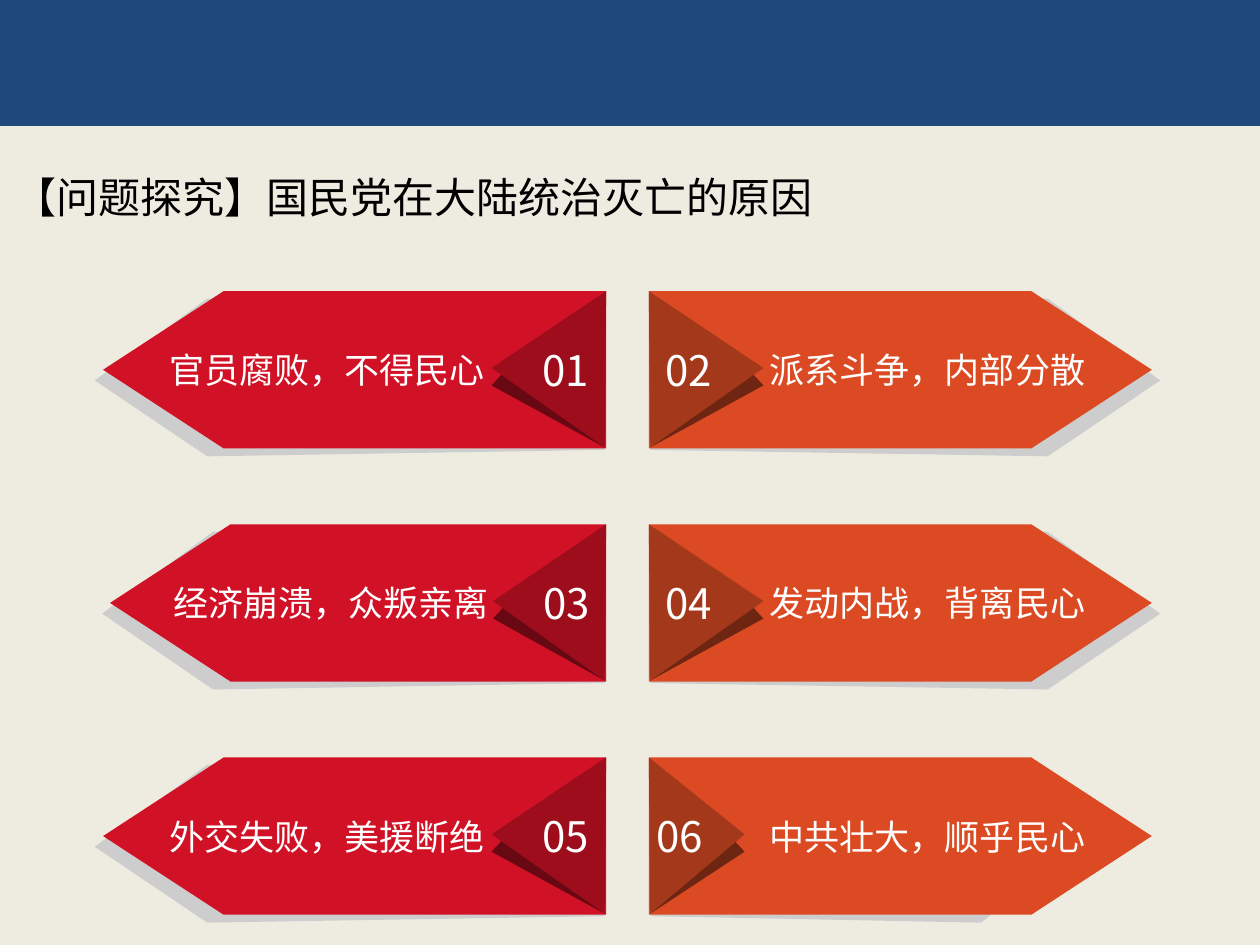
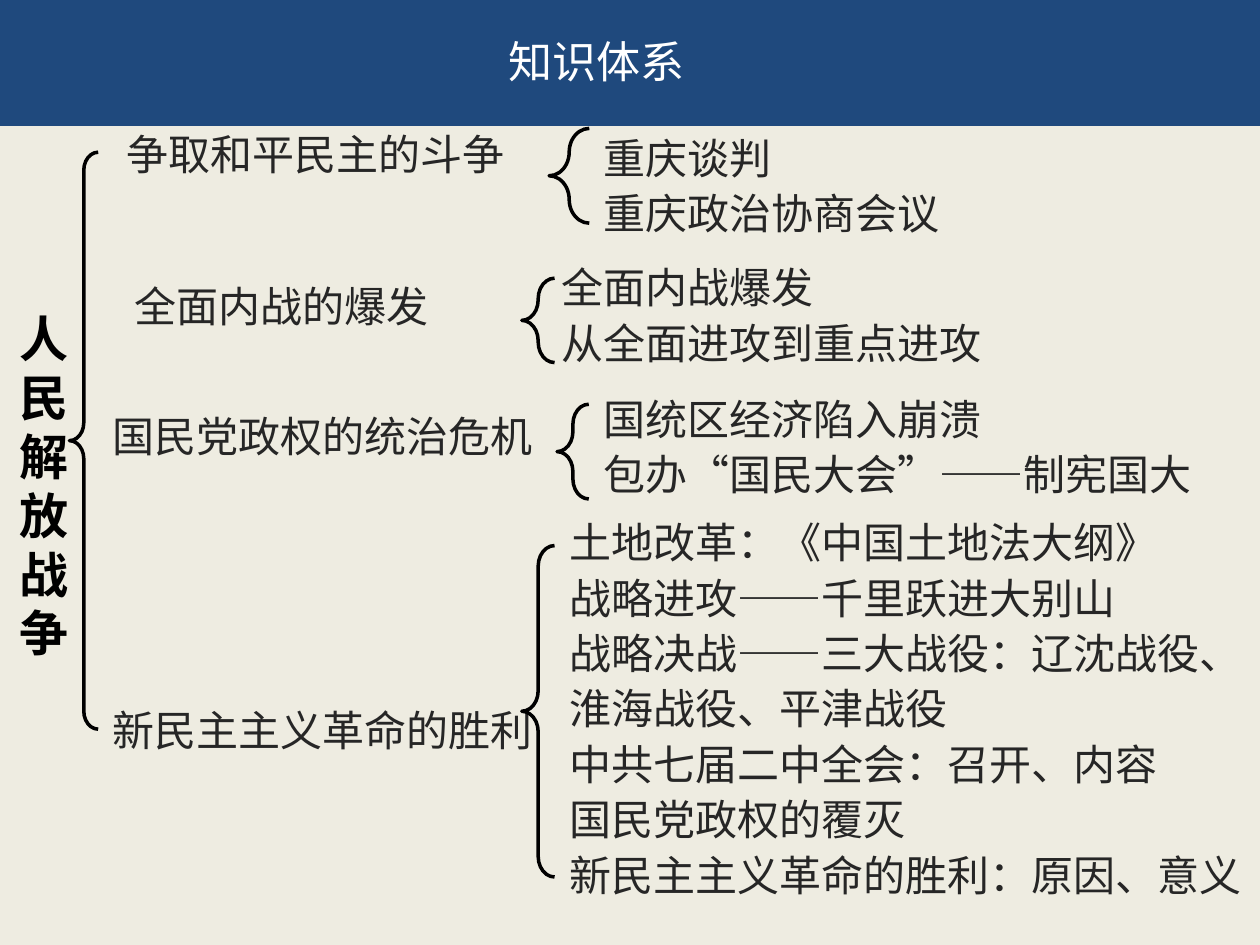
from lxml.etree import SubElement
from pptx import Presentation
from pptx.dml.color import RGBColor
from pptx.enum.lang import MSO_LANGUAGE_ID as Lang
from pptx.enum.shapes import MSO_SHAPE as Kind
from pptx.enum.text import MSO_ANCHOR as Anchor, MSO_AUTO_SIZE as Auto, PP_ALIGN as Align
from pptx.oxml.ns import qn
from pptx.util import Cm, Pt

WIDE, HIGH = 25.4, 19.05
NOTO = "Noto Sans CJK SC"
PAPER, NAVY, GREY = "EEECE1", "1F497D", "CDCDCD"
BLACK, WHITE, INK = "000000", "FFFFFF", "262626"
# Plate, fold and fold shade of the arrows on each side
RED = ("D11125", "9D0D1C", "680812")
ORANGE = ("DB4A23", "A4381A", "6E2512")


def tint(code):
    return RGBColor.from_string(code)


class Deck:
    def __init__(self):
        self.file = Presentation()
        self.file.slide_width, self.file.slide_height = Cm(WIDE), Cm(HIGH)

    def page(self):
        """Start a slide with its background and top band."""
        self.slide = self.file.slides.add_slide(self.file.slide_layouts[6])
        self.home = self.slide.shapes
        back = self.slide.background.fill
        back.solid()
        back.fore_color.rgb = tint(PAPER)
        self.shape(Kind.RECTANGLE, (0, 0, WIDE, 2.54), NAVY)

    def group(self):
        """Send the next shapes into a new group."""
        self.home = self.slide.shapes.add_group_shape().shapes

    def paint(self, item, fill):
        item.shadow.inherit = False
        item.line.fill.background()
        if fill:
            item.fill.solid()
            item.fill.fore_color.rgb = tint(fill)
        else:
            item.fill.background()
        return item

    def shape(self, kind, box, fill=None):
        return self.paint(self.home.add_shape(kind, *map(Cm, box)), fill)

    def form(self, dots, fill):
        """Draw a closed outline through the given points."""
        dots = [(Cm(x), Cm(y)) for x, y in dots]
        pen = self.home.build_freeform(*dots[0])
        pen.add_line_segments(dots[1:], close=True)
        return self.paint(pen.convert_to_shape(), fill)

    def put(self, frame, lines, size, hue, face=NOTO, bold=False, align=Align.LEFT, pitch=None):
        for i, line in enumerate(lines):
            para = frame.add_paragraph() if i else frame.paragraphs[0]
            para.text, para.alignment = line, align
            if pitch:
                para.line_spacing = pitch
            font = para.font
            font.size, font.bold, font.name = Pt(size), bold, face
            font.color.rgb = tint(hue)
            font.language_id = Lang.SIMPLIFIED_CHINESE
            # East Asian glyphs take their own typeface entry
            SubElement(font._element, qn("a:ea"), typeface=NOTO)

    def text(self, box, lines, size=24, hue=INK, wrap=True, **style):
        frame = self.home.add_textbox(*map(Cm, box)).text_frame
        frame.word_wrap, frame.auto_size = wrap, Auto.SHAPE_TO_FIT_TEXT
        self.put(frame, lines, size, hue, **style)
        return frame

    def label(self, item, word, size, left, right):
        """Centre white text in a shape between two side insets."""
        frame = item.text_frame
        frame.margin_left, frame.margin_right = Cm(left), Cm(right)
        frame.margin_top = frame.margin_bottom = 0
        frame.vertical_anchor = Anchor.MIDDLE
        self.put(frame, [word], size, WHITE, align=Align.CENTER)

    def brace(self, box):
        item = self.shape(Kind.LEFT_BRACE, box)
        item.adjustments[0], item.adjustments[1] = 0.627, 0.5
        item.line.color.rgb, item.line.width = tint(BLACK), Pt(2)

    def arrow(self, side, top, mark, word, size=10.14, reach=10.31, fold=2.31):
        """Folded arrow growing from the middle: side 1 is right, -1 left."""
        hinge = 13.08 if side > 0 else 12.22
        plate, flap, shade = ORANGE if side > 0 else RED
        order = slice(None, None, side)

        def place(dots):
            return [(hinge + side * x, top + y) for x, y in dots]

        self.group()
        neck = 0.78 * reach
        self.form(place([(0.1, 0.15), (neck, 0.15), (reach, 1.8), (neck, 3.33), (0.03, 3.2)]), GREY)
        body = self.shape(Kind.PENTAGON, (min(hinge, hinge + side * size), top, size, 3.17), plate)
        body.adjustments[0] = 0.766
        if side < 0:
            body._element.spPr.xfrm.set("flipH", "1")
        self.label(body, word, 20, *(2.31, 0)[order])
        self.form(place([(fold - 0.25, 1.63), (fold, 1.9), (0.03, 3.15)]), shade)
        tab = self.form(place([(0, 0), (fold, 1.55), (0.03, 3.15)]), flap)
        self.label(tab, mark, 24, *(0.1, 0.79)[order])


def causes(deck):
    deck.page()
    deck.text((0.05, 3.07, 24.33, 1.5), ["【问题探究】国民党在大陆统治灭亡的原因"], hue=BLACK, pitch=1.25)
    # Arrows in reading order, with the few that differ in size
    words = ["官员腐败，不得民心", "派系斗争，内部分散", "经济崩溃，众叛亲离",
             "发动内战，背离民心", "外交失败，美援断绝", "中共壮大，顺乎民心"]
    odd = {2: dict(size=10, reach=10.16, fold=2.28), 5: dict(reach=8.59, fold=1.93)}
    for i, word in enumerate(words):
        row, col = divmod(i, 2)
        deck.arrow(1 if col else -1, 5.87 + 4.7 * row, f"{i + 1:02}", word, **odd.get(i, {}))


def system(deck):
    deck.page()
    head = deck.text((0.53, 0.61, 22.99, 1.22), ["知识体系"], 25.2, WHITE, face="Arial", align=Align.CENTER)
    head.auto_size, head.vertical_anchor = Auto.NONE, Anchor.MIDDLE
    deck.text((0.15, 6.1, 1.27, 7.44), ["人民解放战争"], 28, BLACK, bold=True)
    # Topics
    for box, word, pitch in [
        ((2.31, 2.59, 8.2, 1.19), "争取和平民主的斗争", 0.9),
        ((2.46, 5.64, 6.5, 1.19), "全面内战的爆发", 0.9),
        ((2.01, 8.15, 9.07, 1.27), "国民党政权的统治危机", None),
        ((2.01, 14.07, 9.07, 1.27), "新民主主义革命的胜利", None),
    ]:
        deck.text(box, [word], wrap=False, pitch=pitch)
    # Points under each topic
    for box, lines in [
        ((11.91, 2.44, 7.34, 2.49), ["重庆谈判", "重庆政治协商会议"]),
        ((11.07, 5.05, 9.07, 2.49), ["全面内战爆发", "从全面进攻到重点进攻"]),
        ((11.91, 7.7, 12.47, 2.49), ["国统区经济陷入崩溃", "包办“国民大会”——制宪国大"]),
        ((11.23, 10.19, 14.33, 8.13), [
            "土地改革：《中国土地法大纲》",
            "战略进攻——千里跃进大别山",
            "战略决战——三大战役：辽沈战役、淮海战役、平津战役",
            "中共七届二中全会：召开、内容",
            "国民党政权的覆灭",
            "新民主主义革命的胜利：原因、意义",
        ]),
    ]:
        deck.text(box, lines, wrap=len(lines) > 2, pitch=1.1)
    # Braces
    for box in [(11.07, 2.59, 0.81, 1.91), (10.52, 5.61, 0.66, 1.7), (11.23, 8.15, 0.64, 1.91),
                (10.52, 11, 0.66, 6.68), (1.4, 3.07, 0.58, 11.63)]:
        deck.brace(box)


def main():
    deck = Deck()
    causes(deck)
    system(deck)
    deck.file.save("out.pptx")


if __name__ == "__main__":
    main()
